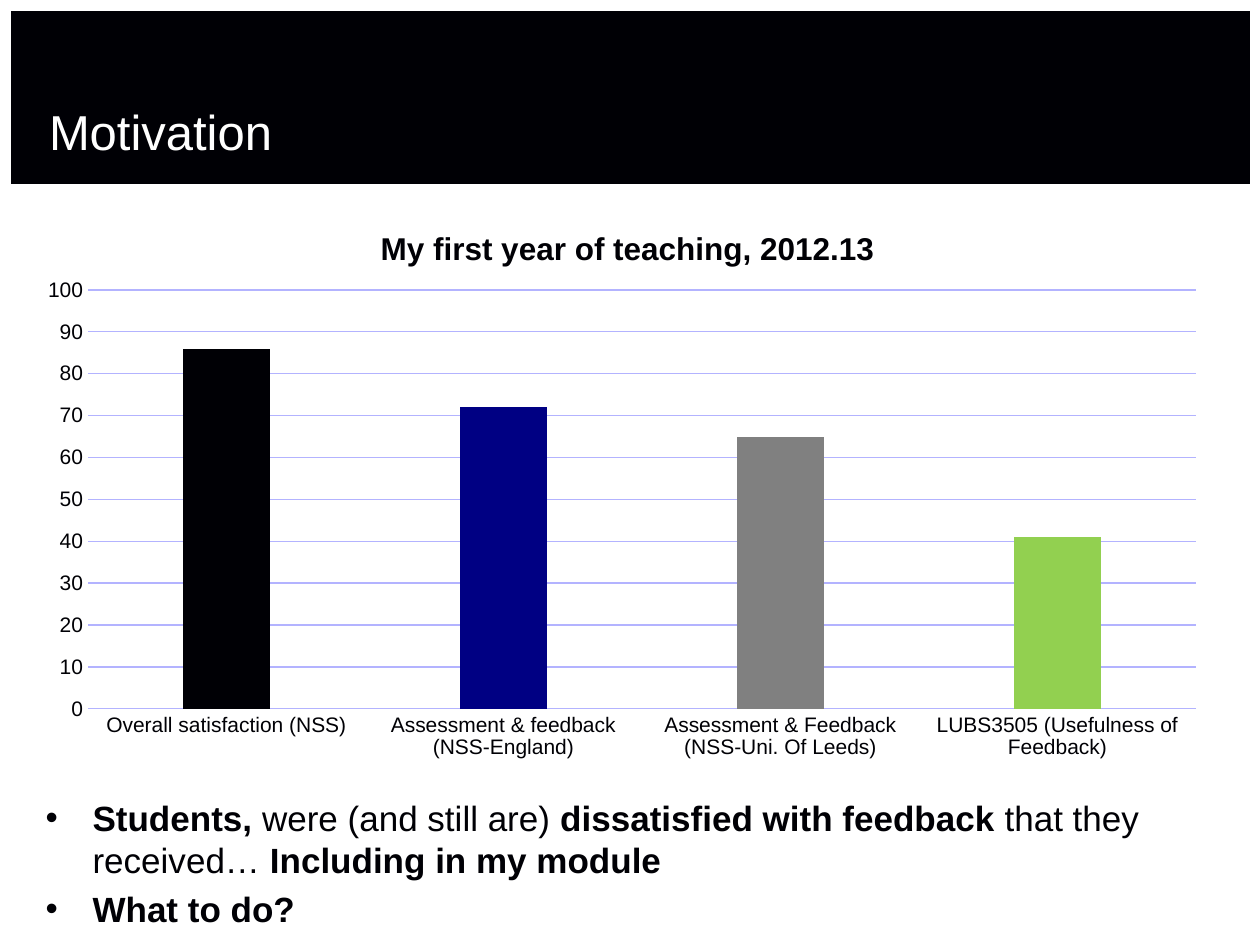
"""Build the Motivation slide: title band, feedback score chart and bullets."""
from dataclasses import dataclass

from lxml import etree
from pptx import Presentation
from pptx.chart.data import CategoryChartData
from pptx.dml.color import RGBColor
from pptx.enum.chart import XL_CHART_TYPE, XL_TICK_MARK
from pptx.enum.shapes import MSO_SHAPE
from pptx.enum.text import MSO_ANCHOR, MSO_AUTO_SIZE, PP_ALIGN
from pptx.oxml.ns import qn
from pptx.util import Emu, Pt

COLUMN = XL_CHART_TYPE.COLUMN_CLUSTERED
NO_TICK = XL_TICK_MARK.NONE
RECT = MSO_SHAPE.RECTANGLE
BOTTOM, TOP = MSO_ANCHOR.BOTTOM, MSO_ANCHOR.TOP
NO_FIT = MSO_AUTO_SIZE.NONE
LEFT = PP_ALIGN.LEFT

PX_PER_INCH = 126
FONT = "Arial"
COLORS = {
    "ink": "000005",
    "white": "FFFFFF",
    "grid": "B3B3FF",
    "navy": "000083",
    "gray": "808080",
    "green": "92D050",
}


@dataclass(frozen=True)
class Box:
    x: int
    y: int
    w: int
    h: int


@dataclass(frozen=True)
class Score:
    label: str
    value: int
    color: str


@dataclass(frozen=True)
class Span:
    text: str
    bold: bool = True


BAND = Box(11, 11, 1239, 173)
TITLE = Box(49, 58, 672, 102)
CHART = Box(24, 195, 1197, 576)
PLOT = Box(88, 290, 1108, 419)
HEADING = Box(375, 222, 493, 36)
BODY = Box(33, 790, 1196, 149)

SCORES = [
    Score("Overall satisfaction (NSS)", 86, "ink"),
    Score("Assessment & feedback (NSS-England)", 72, "navy"),
    Score("Assessment & Feedback (NSS-Uni. Of Leeds)", 65, "gray"),
    Score("LUBS3505 (Usefulness of Feedback)", 41, "green"),
]
BULLETS = [
    [
        Span("Students, "),
        Span("were (and still are)", False),
        Span(" dissatisfied with feedback "),
        Span("that they received… ", False),
        Span("Including in my module"),
    ],
    [Span("What to do?")],
]


def px(n: int) -> Emu:
    """Turn pixels into EMU."""
    return Emu(round(n * 914400 / PX_PER_INCH))


def rgb(name: str) -> RGBColor:
    """Look up a named colour."""
    return RGBColor.from_string(COLORS[name])


def place(sp, box: Box) -> None:
    """Move and size a shape."""
    sp.left, sp.top, sp.width, sp.height = map(px, (box.x, box.y, box.w, box.h))


def set_font(font, size: int, color: str, bold: bool = False) -> None:
    """Set face, size, colour and weight."""
    font.name, font.size, font.bold = FONT, Pt(size), bold
    font.color.rgb = rgb(color)


def add_band(slide, box: Box) -> None:
    """Draw the dark band behind the title."""
    sp = slide.shapes.add_shape(RECT, *map(px, (box.x, box.y, box.w, box.h)))
    sp.shadow.inherit = False
    sp.fill.solid()
    sp.fill.fore_color.rgb = rgb("ink")
    sp.line.fill.background()
    slide.shapes.title.element.addprevious(sp.element)


def fill_title(sp, text: str) -> None:
    """Place and write the title."""
    place(sp, TITLE)
    tf = sp.text_frame
    tf.auto_size, tf.vertical_anchor, tf.word_wrap = NO_FIT, BOTTOM, True
    tf.margin_left = tf.margin_right = tf.margin_top = tf.margin_bottom = 0
    p = tf.paragraphs[0]
    p.alignment = LEFT
    r = p.add_run()
    r.text = text
    set_font(r.font, 28, "white")


def fill_bullets(sp, bullets: list[list[Span]]) -> None:
    """Place and write the bullet list."""
    place(sp, BODY)
    tf = sp.text_frame
    tf.auto_size, tf.vertical_anchor, tf.word_wrap = NO_FIT, TOP, True
    for i, spans in enumerate(bullets):
        p = tf.add_paragraph() if i else tf.paragraphs[0]
        pPr = p._p.get_or_add_pPr()
        pPr.set("marL", str(px(47)))
        pPr.set("indent", str(-px(47)))
        etree.SubElement(pPr, qn("a:buChar"), char="•")
        p.space_before = Pt(4 if i else 0)
        for span in spans:
            r = p.add_run()
            r.text = span.text
            set_font(r.font, 20, "ink", span.bold)


def set_layout(parent, index: int, box: Box, inner: bool) -> None:
    """Fix a chart part at a place within the chart frame."""
    for old in parent.findall(qn("c:layout")):
        parent.remove(old)
    layout = etree.Element(qn("c:layout"))
    parent.insert(index, layout)
    manual = etree.SubElement(layout, qn("c:manualLayout"))
    items = [("xMode", "edge"), ("yMode", "edge"),
             ("x", (box.x - CHART.x) / CHART.w), ("y", (box.y - CHART.y) / CHART.h)]
    if inner:
        items = [("layoutTarget", "inner"), *items,
                 ("w", box.w / CHART.w), ("h", box.h / CHART.h)]
    for tag, val in items:
        etree.SubElement(manual, qn(f"c:{tag}"), val=str(val))


def add_score_chart(slide, scores: list[Score], heading: str) -> None:
    """Draw the column chart, one colour a score."""
    data = CategoryChartData()
    data.categories = [s.label for s in scores]
    data.add_series("Series 1", [s.value for s in scores])
    frame = map(px, (CHART.x, CHART.y, CHART.w, CHART.h))
    chart = slide.shapes.add_chart(COLUMN, *frame, data).chart
    set_font(chart.font, 12, "ink")
    chart.has_legend = False
    chart.has_title = True
    r = chart.chart_title.text_frame.paragraphs[0].add_run()
    r.text = heading
    set_font(r.font, 18, "ink", True)

    plot = chart.plots[0]
    plot.gap_width, plot.overlap, plot.vary_by_categories = 219, -27, False
    for i, score in enumerate(scores):
        fill = plot.series[0].points[i].format.fill
        fill.solid()
        fill.fore_color.rgb = rgb(score.color)

    cat, val = chart.category_axis, chart.value_axis
    for axis in (cat, val):
        axis.major_tick_mark = axis.minor_tick_mark = NO_TICK
        set_font(axis.tick_labels.font, 12, "ink")
    val.minimum_scale, val.maximum_scale, val.major_unit = 0, 100, 10
    val.format.line.fill.background()
    for line in (cat.format.line, val.major_gridlines.format.line):
        line.color.rgb = rgb("grid")
        line.width = Pt(0.75)

    set_layout(chart.element.find(f".//{qn('c:plotArea')}"), 0, PLOT, True)
    set_layout(chart.element.find(f".//{qn('c:title')}"), 1, HEADING, False)


def main() -> None:
    """Build and save the slide."""
    prs = Presentation()
    prs.slide_width, prs.slide_height = px(1260), px(945)
    slide = prs.slides.add_slide(prs.slide_layouts[1])
    add_band(slide, BAND)
    fill_title(slide.shapes.title, "Motivation")
    fill_bullets(slide.placeholders[1], BULLETS)
    add_score_chart(slide, SCORES, "My first year of teaching, 2012.13")
    prs.save("out.pptx")


if __name__ == "__main__":
    main()
